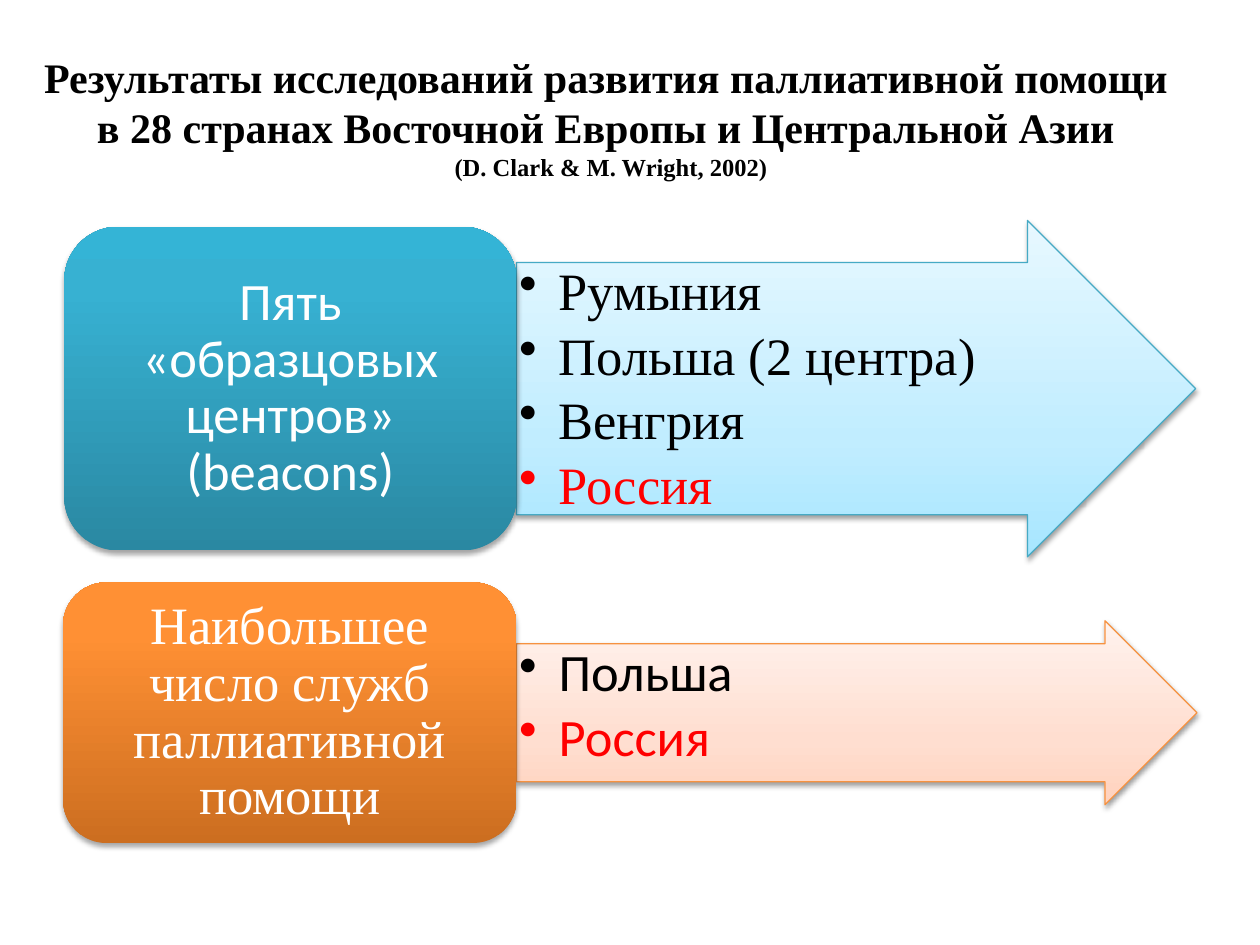
import pptx
import pptx.dml.color
import pptx.enum.shapes
import pptx.enum.text
import pptx.oxml
import pptx.oxml.ns
import pptx.util
from lxml import etree

Pt = pptx.util.Pt
SHAPE = pptx.enum.shapes.MSO_SHAPE
ANCHOR = pptx.enum.text.MSO_ANCHOR
CENTER = pptx.enum.text.PP_ALIGN.CENTER
qn = pptx.oxml.ns.qn

SERIF, SANS = "Times New Roman", "Calibri"
BLACK, WHITE, RED = "000000", "FFFFFF", "FF0000"
SEAM = 295.2  # where the boxes end and the arrows start


def rgb(color):
    return pptx.dml.color.RGBColor.from_string(color)


def style_font(p, name, size, color, bold=False):
    p.font.name = name
    p.font.size = Pt(size)
    p.font.color.rgb = rgb(color)
    p.font.bold = bold


def fill_gradient(s, stops):
    """Fill from bottom to top with (percent, colour) stops."""
    s.fill.gradient()
    s.fill.gradient_angle = 90
    gs_list = s._element.spPr.find(qn("a:gradFill")).find(qn("a:gsLst"))
    for gs in list(gs_list):
        gs_list.remove(gs)
    for percent, color in stops:
        gs = etree.SubElement(gs_list, qn("a:gs"), pos=str(percent * 1000))
        etree.SubElement(gs, qn("a:srgbClr"), val=color)


def add_shadow(s, alpha, distance):
    s.shadow.inherit = False
    effects = s._element.spPr.find(qn("a:effectLst"))
    shadow = etree.SubElement(effects, qn("a:outerShdw"), blurRad=str(Pt(3.1)),
                              dist=str(Pt(distance)), dir="5400000", rotWithShape="0")
    color = etree.SubElement(shadow, qn("a:srgbClr"), val=BLACK)
    etree.SubElement(color, qn("a:alpha"), val=str(alpha * 1000))


def set_frame(tf, anchor, margin_x, margin_y):
    tf.word_wrap = True
    tf.vertical_anchor = anchor
    tf.margin_left = tf.margin_right = Pt(margin_x)
    tf.margin_top = tf.margin_bottom = Pt(margin_y)


def add_bullet(p):
    pPr = p._p.get_or_add_pPr()
    pPr.set("marL", str(Pt(22.5)))
    pPr.set("indent", str(-Pt(22.5)))
    bullet = pptx.oxml.parse_xml(f'<a:buChar {pptx.oxml.ns.nsdecls("a")} char="•"/>')
    pPr.insert_element_before(bullet, "a:tabLst", "a:defRPr", "a:extLst")


def add_title(slide, lines, source):
    sp = slide.shapes.add_textbox(Pt(14.4), Pt(21.6), Pt(669.6), Pt(90))
    set_frame(sp.text_frame, ANCHOR.MIDDLE, 7.2, 3.6)
    p = sp.text_frame.paragraphs[0]
    p.alignment = CENTER
    style_font(p, SERIF, 24, BLACK, bold=True)
    for line in lines:
        p.add_run().text = line
        p.add_line_break()
    r = p.add_run()
    r.text = source
    r.font.size = Pt(14)


def add_arrow(slide, middle, width, height, stops, outline, font, items):
    s = slide.shapes.add_shape(SHAPE.RIGHT_ARROW, Pt(SEAM), Pt(middle - height / 2),
                               Pt(width), Pt(height))
    s.adjustments[0], s.adjustments[1] = 0.75, 0.5
    fill_gradient(s, stops)
    s.line.color.rgb = rgb(outline)
    s.line.width = Pt(0.75)
    add_shadow(s, 38, 1.6)
    tf = s.text_frame
    set_frame(tf, ANCHOR.TOP, 1.5, 1.5)
    for i, (text, color) in enumerate(items):
        p = tf.add_paragraph() if i else tf.paragraphs[0]
        p.text = text
        p.alignment = pptx.enum.text.PP_ALIGN.LEFT
        p.line_spacing = 0.9
        p.space_after = Pt(4.5)
        style_font(p, font, 30, color)
        add_bullet(p)


def add_box(slide, middle, left, height, stops, font, text):
    s = slide.shapes.add_shape(SHAPE.ROUNDED_RECTANGLE, Pt(left), Pt(middle - height / 2),
                               Pt(SEAM - left), Pt(height))
    fill_gradient(s, stops)
    s.line.fill.background()
    add_shadow(s, 35, 1.8)
    set_frame(s.text_frame, ANCHOR.MIDDLE, 8.6, 4.3)
    p = s.text_frame.paragraphs[0]
    p.text = text
    p.alignment = CENTER
    p.line_spacing = 0.9
    p.space_after = Pt(10.5)
    style_font(p, font, 30, WHITE)


def main():
    prs = pptx.Presentation()
    prs.slide_width, prs.slide_height = Pt(720), Pt(540)
    slide = prs.slides.add_slide(prs.slide_layouts[6])

    add_title(slide, ["Результаты исследований развития паллиативной помощи ",
                      "в 28 странах Восточной Европы и Центральной Азии "],
              "(D. Clark & M. Wright, 2002)")

    beacons, services = 222.1, 407.3  # vertical middles of the two rows
    add_arrow(slide, beacons, 388, 192.2,
              [(0, "A7E6FF"), (35, "C1EDFF"), (100, "E7F8FF")], "46AAC5", SERIF,
              [("Румыния", BLACK), ("Польша (2 центра)", BLACK),
               ("Венгрия", BLACK), ("Россия", RED)])
    add_box(slide, beacons, 36.7, 185,
            [(0, "2A88A2"), (80, "37B1D2"), (100, "34B4D6")], SANS,
            "Пять «образцовых центров» (beacons)")

    add_arrow(slide, services, 388.8, 105.1,
              [(0, "FFD2BD"), (35, "FFDED0"), (100, "FFF2ED")], "F69240", SANS,
              [("Польша", BLACK), ("Россия", RED)])
    add_box(slide, services, 36, 149,
            [(0, "CC6E20"), (80, "FF9034"), (100, "FF9136")], SERIF,
            "Наибольшее число служб паллиативной помощи")

    prs.save("out.pptx")


if __name__ == "__main__":
    main()
